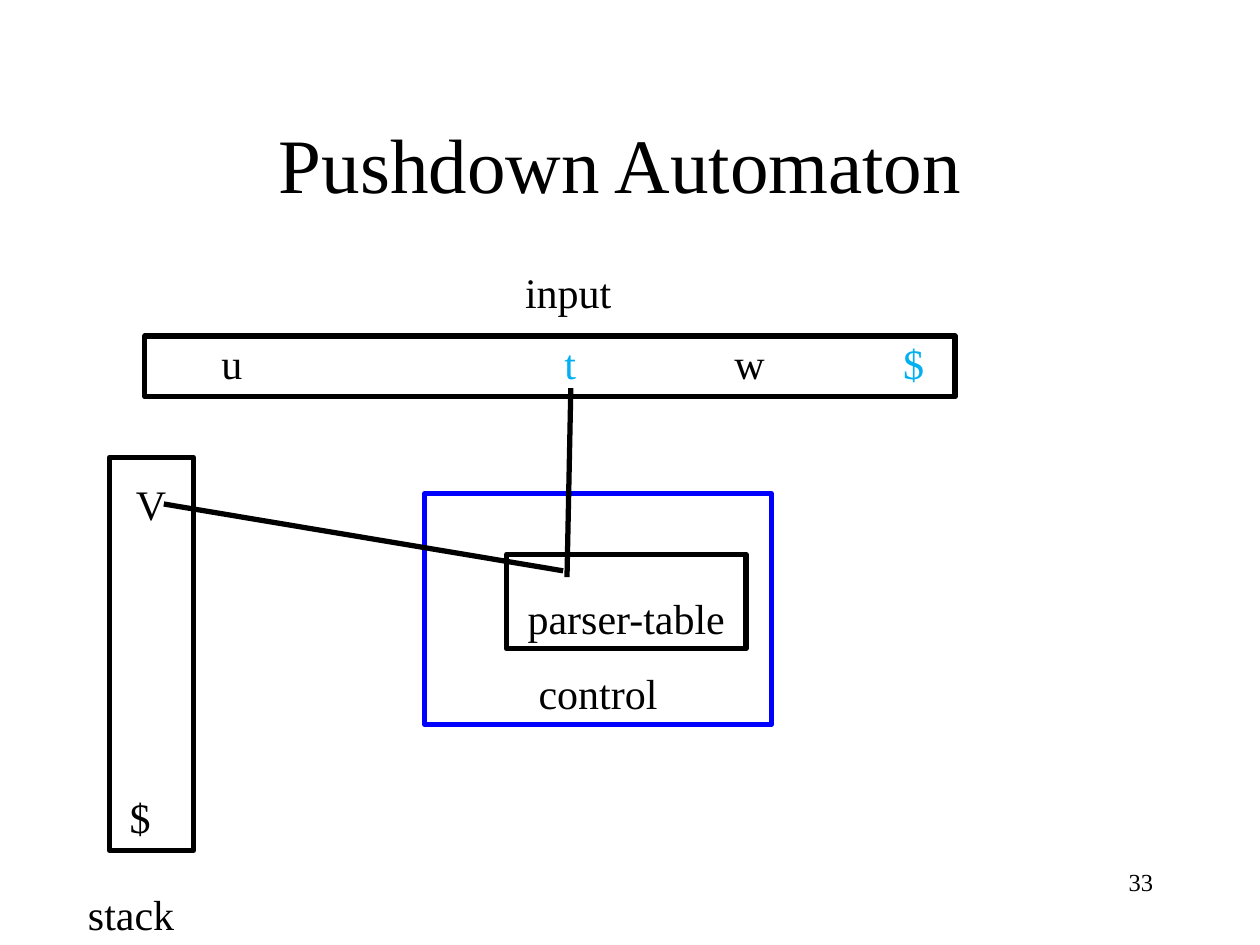
import pptx
import pptx.util
import pptx.dml.color
import pptx.enum.shapes
import pptx.enum.text
import pptx.oxml

Pt = pptx.util.Pt
ALIGN = pptx.enum.text.PP_ALIGN
ANCHOR = pptx.enum.text.MSO_ANCHOR

THEME = {
    "font": "Times New Roman",
    "black": "000000", "blue": "0000FF", "cyan": "00B0F0",
    "title": 44, "body": 24, "number": 14, "line": 3,
}

# Content: lengths in points
TITLE = ("Pushdown Automaton ", (54, 48, 612, 90))
PAGE_NUMBER = ("33", (516, 492, 150, 36))
BOXES = [  # text, colour, (left, top, width, height)
    ("control", "blue", (242.7, 282, 198, 132)),
    ("parser-table", "black", (289.5, 316.8, 136.8, 54)),
    ("", "black", (82.8, 192, 463, 34.8)),  # input tape
    ("", "black", (62.6, 261.4, 48, 224.6)),  # stack
]
CAPTIONS = [("input", 293, 149), ("stack", 43.2, 504)]
TAPE_TOP = 189.5
TAPE_SYMBOLS = [("u", "black", 119.5), ("t", "cyan", 315.4),
                ("w", "black", 412.6), ("$", "cyan", 509)]
STACK_SYMBOLS = [("V", 70.6, 270), ("$", 67, 448.6)]
LINKS = [  # from, to
    ((326.2, 221.8), (324, 329.8)),  # tape to table
    ((93.6, 288), (321.8, 326.2)),  # stack to table
]
CAPTION_SIZE = (127.4, 36)
SYMBOL_SIZE = (33.8, 36)


def color(name):
    return pptx.dml.color.RGBColor.from_string(THEME[name])


def set_line(line, name):
    line.color.rgb = color(name)
    line.width = Pt(THEME["line"])


def write_text(shape, text, size="body", tint="black", align=ALIGN.LEFT,
               anchor=ANCHOR.TOP, wrap=True):
    frame = shape.text_frame
    frame.word_wrap = wrap
    frame.vertical_anchor = anchor
    paragraph = frame.paragraphs[0]
    paragraph.alignment = align
    run = paragraph.add_run()
    run.text = text
    run.font.name = THEME["font"]
    run.font.size = Pt(THEME[size])
    run.font.color.rgb = color(tint)


def add_label(slide, text, bounds, **text_format):
    label = slide.shapes.add_textbox(*map(Pt, bounds))
    write_text(label, text, **text_format)


def add_box(slide, text, tint, bounds):
    box = slide.shapes.add_shape(
        pptx.enum.shapes.MSO_SHAPE.RECTANGLE, *map(Pt, bounds))
    box.shadow.inherit = False
    box.fill.background()
    set_line(box.line, tint)
    if text:
        write_text(box, text, align=ALIGN.CENTER, anchor=ANCHOR.BOTTOM, wrap=False)


def add_link(slide, start, end):
    link = slide.shapes.add_connector(
        pptx.enum.shapes.MSO_CONNECTOR.STRAIGHT, *map(Pt, start + end))
    set_line(link.line, "black")
    link._element.spPr.append(pptx.oxml.parse_xml(
        '<a:effectLst xmlns:a="http://schemas.openxmlformats.org/drawingml/2006/main"/>'))


def main():
    presentation = pptx.Presentation()
    presentation.slide_width, presentation.slide_height = Pt(720), Pt(540)
    slide = presentation.slides.add_slide(presentation.slide_layouts[6])

    # Title and page number
    add_label(slide, *TITLE, size="title", align=ALIGN.CENTER, anchor=ANCHOR.MIDDLE)
    add_label(slide, *PAGE_NUMBER, size="number", align=ALIGN.RIGHT)

    # Control unit, parser table, tape and stack
    for text, tint, bounds in BOXES:
        add_box(slide, text, tint, bounds)

    # Captions and symbols
    for text, left, top in CAPTIONS:
        add_label(slide, text, (left, top, *CAPTION_SIZE))
    for text, tint, left in TAPE_SYMBOLS:
        add_label(slide, text, (left, TAPE_TOP, *SYMBOL_SIZE), tint=tint)
    for text, left, top in STACK_SYMBOLS:
        add_label(slide, text, (left, top, *SYMBOL_SIZE))

    # Reading heads
    for start, end in LINKS:
        add_link(slide, start, end)

    presentation.save("out.pptx")


if __name__ == "__main__":
    main()
